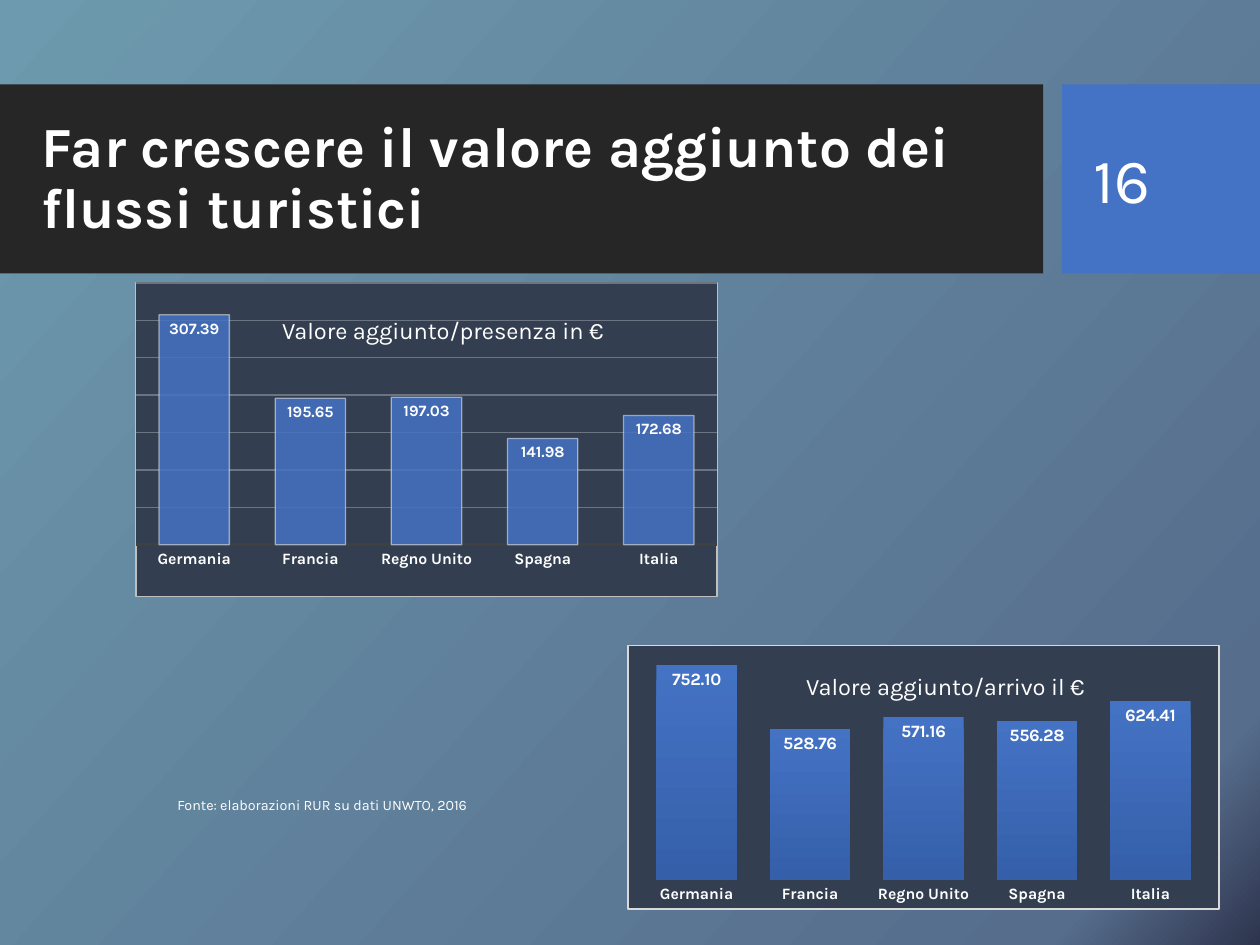
from pptx import Presentation
from pptx.chart.data import CategoryChartData
from pptx.dml.color import RGBColor
from pptx.enum.chart import XL_CHART_TYPE as ChartType, XL_LABEL_POSITION as LabelPos, XL_TICK_MARK as TickMark
from pptx.enum.shapes import MSO_SHAPE as Shape
from pptx.enum.text import MSO_ANCHOR as Anchor, PP_ALIGN as Align
from pptx.oxml import parse_xml
from pptx.oxml.ns import nsdecls, qn
from pptx.util import Inches, Pt

FONT = "Karla"
WHITE = RGBColor(0xFF, 0xFF, 0xFF)
BLUE = RGBColor(0x44, 0x72, 0xC4)
DEEP_BLUE = RGBColor(0x35, 0x5F, 0xA9)
CHARCOAL = RGBColor(0x26, 0x26, 0x26)
PANEL = RGBColor(0x33, 0x3F, 0x50)
GRID = RGBColor(0x6B, 0x74, 0x80)
AXIS = RGBColor(0x40, 0x40, 0x40)
SILVER = RGBColor(0xBF, 0xBF, 0xBF)
PALE = RGBColor(0xD9, 0xD9, 0xD9)
TEAL = RGBColor(0x6D, 0x9A, 0xAE)
SLATE = RGBColor(0x56, 0x6D, 0x8C)
NIGHT = RGBColor(0x2E, 0x34, 0x4E)

COUNTRIES = ["Germania", "Francia", "Regno Unito", "Spagna", "Italia"]


def set_gradient(fill, owner, stops, angle):
    fill.gradient()
    gradient = owner.find(".//" + qn("a:gradFill"))
    for part in list(gradient):
        gradient.remove(part)
    marks = "".join(
        f'<a:gs pos="{position * 1000}"><a:srgbClr val="{color}"/></a:gs>'
        for position, color in stops
    )
    gradient.append(parse_xml(f'<a:gsLst {nsdecls("a")}>{marks}</a:gsLst>'))
    gradient.append(parse_xml(f'<a:lin {nsdecls("a")} ang="{angle * 60000}" scaled="0"/>'))


def set_opacity(properties, percent):
    color = properties.find(".//" + qn("a:srgbClr"))
    color.append(parse_xml(f'<a:alpha {nsdecls("a")} val="{percent * 1000}"/>'))


def style_font(font, size, bold=False):
    font.name = FONT
    font.size = Pt(size)
    font.bold = bold
    font.color.rgb = WHITE


def add_band(slide, left, width, color):
    band = slide.shapes.add_shape(
        Shape.RECTANGLE, Inches(left), Inches(0.67), Inches(width), Inches(1.5))
    band.shadow.inherit = False
    band.fill.solid()
    band.fill.fore_color.rgb = color
    band.line.fill.background()


def add_text(slide, box, words, size, bold=False, anchor=Anchor.TOP, wrap=True):
    frame = slide.shapes.add_textbox(*map(Inches, box)).text_frame
    frame.word_wrap = wrap
    frame.vertical_anchor = anchor
    paragraph = frame.paragraphs[0]
    paragraph.text = words
    style_font(paragraph.font, size, bold)
    return paragraph


def panel_properties(border=None):
    line = "<a:ln><a:noFill/></a:ln>"
    if border is not None:
        line = f'<a:ln w="9525"><a:solidFill><a:srgbClr val="{border}"/></a:solidFill></a:ln>'
    return parse_xml(
        f'<c:spPr {nsdecls("c", "a")}><a:solidFill><a:srgbClr val="{PANEL}"/>'
        f'</a:solidFill>{line}</c:spPr>')


def set_plot_layout(plot_area, bounds):
    for layout in plot_area.findall(qn("c:layout")):
        plot_area.remove(layout)
    sizes = "".join(f'<c:{key} val="{value}"/>' for key, value in zip("xywh", bounds))
    plot_area.insert(0, parse_xml(
        f'<c:layout {nsdecls("c")}><c:manualLayout><c:layoutTarget val="inner"/>'
        f'<c:xMode val="edge"/><c:yMode val="edge"/>{sizes}</c:manualLayout></c:layout>'))


def add_column_chart(slide, box, values, top, gap, label_size, border, bounds):
    data = CategoryChartData(number_format="0.00")
    data.categories = COUNTRIES
    data.add_series("Series 1", values)
    chart = slide.shapes.add_chart(
        ChartType.COLUMN_CLUSTERED, *map(Inches, box), data).chart
    chart.has_legend = False
    chart.has_title = False
    style_font(chart.font, 10)

    chart_root = chart.element.find(qn("c:chart"))
    chart_root.addnext(panel_properties(border))
    plot_area = chart_root.find(qn("c:plotArea"))
    set_plot_layout(plot_area, bounds)
    plot_area.append(panel_properties())

    countries = chart.category_axis
    countries.major_tick_mark = TickMark.NONE
    countries.format.line.fill.background()
    style_font(countries.tick_labels.font, 9, True)
    amounts = chart.value_axis
    amounts.minimum_scale, amounts.maximum_scale = 0, top
    amounts.has_major_gridlines = False
    amounts.visible = False

    plot = chart.plots[0]
    plot.gap_width = gap
    plot.vary_by_categories = False
    plot.has_data_labels = True
    labels = plot.data_labels
    labels.show_value = True
    labels.position = LabelPos.INSIDE_END
    labels.number_format = "0.00"
    labels.number_format_is_linked = False
    style_font(labels.font, label_size, True)
    return chart, plot_area.find(".//" + qn("c:ser"))


def add_stay_chart(slide):
    chart, columns = add_column_chart(
        slide, (1.07, 2.24, 4.63, 2.5), (307.39, 195.65, 197.03, 141.98, 172.68),
        350, 65, 9, SILVER, (0, 0, 1, 0.835))
    look = chart.plots[0].series[0].format
    look.fill.solid()
    look.fill.fore_color.rgb = BLUE
    set_opacity(columns.find(qn("c:spPr")), 85)
    look.line.color.rgb = WHITE
    look.line.width = Pt(0.75)
    set_opacity(columns.find(".//" + qn("a:ln")), 50)
    axis_line = chart.category_axis.format.line
    axis_line.color.rgb = AXIS
    axis_line.width = Pt(1.5)
    amounts = chart.value_axis
    amounts.major_unit = 50
    amounts.has_major_gridlines = True
    amounts.major_gridlines.format.line.color.rgb = GRID
    amounts.major_gridlines.format.line.width = Pt(0.75)


def add_arrival_chart(slide):
    chart, columns = add_column_chart(
        slide, (4.98, 5.12, 4.7, 2.1), (752.10, 528.76, 571.16, 556.28, 624.41),
        800, 41, 10, PALE, (0.02, 0.02, 0.96, 0.87))
    fill = chart.plots[0].series[0].format.fill
    set_gradient(fill, columns, [(0, BLUE), (100, DEEP_BLUE)], 90)


def main():
    deck = Presentation()
    deck.slide_width, deck.slide_height = Inches(10), Inches(7.5)
    slide = deck.slides.add_slide(deck.slide_layouts[6])
    set_gradient(slide.background.fill, slide.element,
                 [(0, TEAL), (90, SLATE), (100, NIGHT)], 42)

    add_band(slide, 0, 8.28, CHARCOAL)
    add_band(slide, 8.43, 1.57, BLUE)
    title = add_text(slide, (0.23, 0.98, 8.3, 0.89),
                     "Far crescere il valore aggiunto dei flussi turistici",
                     32.4, True, Anchor.MIDDLE)
    title.line_spacing = 0.9
    add_text(slide, (8.58, 0.82, 1.27, 1.19), "16", 36, anchor=Anchor.MIDDLE)

    add_stay_chart(slide)
    add_arrival_chart(slide)

    credit = add_text(slide, (1.31, 6.26, 2.59, 0.25),
                      "Fonte: elaborazioni RUR su dati UNWTO, 2016", 8.2, wrap=False)
    credit.alignment = Align.JUSTIFY
    credit.line_spacing = 1.07
    credit.space_after = Pt(6)
    add_text(slide, (2.14, 2.46, 2.83, 0.33), "Valore aggiunto/presenza in €", 13.5)
    add_text(slide, (6.3, 5.28, 2.64, 0.33), "Valore aggiunto/arrivo il €", 13.5)

    deck.save("out.pptx")


if __name__ == "__main__":
    main()
